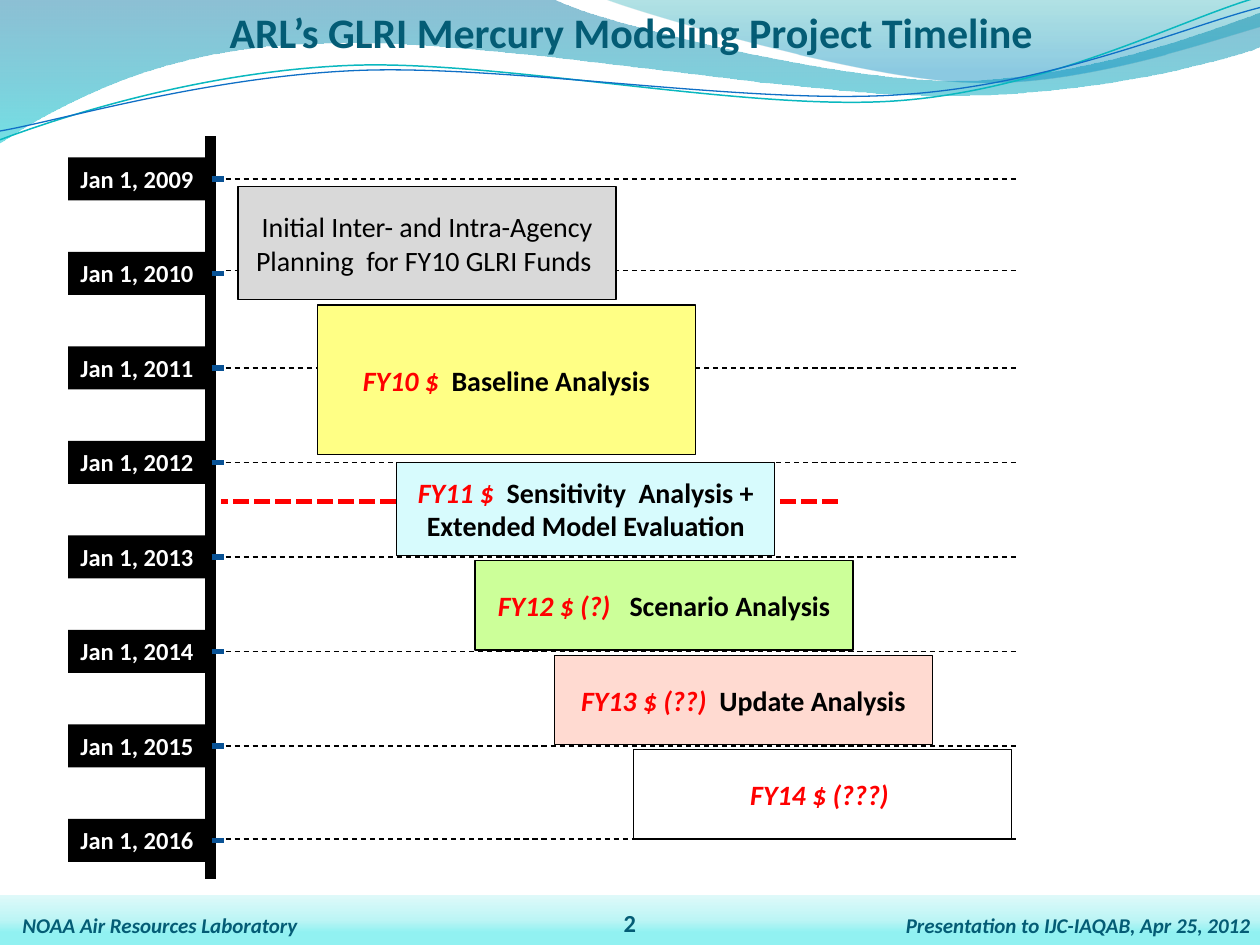
from lxml.etree import SubElement
from pptx import Presentation
from pptx.dml.color import RGBColor as RGB
from pptx.enum.dml import MSO_LINE as Dash
from pptx.enum.shapes import MSO_CONNECTOR as Link, MSO_SHAPE as Form
from pptx.enum.text import MSO_ANCHOR as Anchor, MSO_AUTO_SIZE as Fit, PP_ALIGN as Align
from pptx.oxml import parse_xml
from pptx.oxml.ns import nsdecls, qn
from pptx.util import Cm, Pt

BLACK, WHITE, RED = RGB(0, 0, 0), RGB(255, 255, 255), RGB(255, 0, 0)
TEAL, BLUE = RGB(0x04, 0x5C, 0x75), RGB(0x09, 0x52, 0x95)
AQUA, NAVY = RGB(0x0A, 0xB8, 0xBF), RGB(0x0F, 0x6F, 0xC6)
GRAY, YELLOW, CYAN = RGB(0xD9, 0xD9, 0xD9), RGB(0xFF, 0xFF, 0x85), RGB(0xD7, 0xFB, 0xFD)
GREEN, PINK = RGB(0xCC, 0xFF, 0x99), RGB(0xFF, 0xDA, 0xD1)

# Content; all places are in inches
TITLE = "ARL’s GLRI Mercury Modeling Project Timeline"
YEARS = range(2009, 2017)
# Guides that sit slightly above their tick
RAISED = {2010: 2.15, 2016: 6.66}
# Phases: funding, task, fill, left, top, height
PHASES = [
    ("", "Initial Inter- and Intra-Agency Planning  for FY10 GLRI Funds ", GRAY, 1.89, 1.48, 0.9),
    ("FY10 $  ", "Baseline Analysis", YELLOW, 2.52, 2.42, 1.19),
    ("FY11 $  ", "Sensitivity  Analysis + Extended Model Evaluation", CYAN, 3.15, 3.67, 0.74),
    ("FY12 $ (?)   ", "Scenario Analysis", GREEN, 3.77, 4.45, 0.71),
    ("FY13 $ (??)  ", "Update Analysis", PINK, 4.4, 5.2, 0.71),
    ("FY14 $ (???) ", "", WHITE, 5.03, 5.95, 0.71),
]
# Footer: text, box, size, italic, alignment, anchor
FOOTER = [
    ("NOAA Air Resources Laboratory", (0.08, 7.19, 2.44, 0.3), 12, True, Align.LEFT, Anchor.TOP),
    ("2", (4.85, 7.15, 0.3, 0.34), 14, False, Align.CENTER, Anchor.BOTTOM),
    ("Presentation to IJC-IAQAB, Apr 25, 2012", (7.09, 7.19, 2.98, 0.3), 12, True,
     Align.LEFT, Anchor.TOP),
]
# Wave paths: a pair is a corner, six numbers are a Bezier curve
BANDS = [
    ([(0, 0), (4.4, 0), (4.76, 0.18, 6.64, 0.64, 7.58, 0.64),
      (8.53, 0.64, 9.58, 0.26, 10, 0.1), (10.01, 0.37),
      (9.83, 0.45, 8.7, 0.77, 7.46, 0.76), (6.22, 0.76, 3.82, 0.29, 2.57, 0.35),
      (1.29, 0.36, 0.46, 0.84, -0.01, 1.14), (0, 0)],
     [(0, "0074A1", 45), (100, "00C6CF", 55)]),
    ([(4.79, -0.01), (5.09, 0.11, 6.82, 0.62, 7.69, 0.65),
      (8.56, 0.69, 9.61, 0.32, 10, 0.21), (10, 0), (4.79, -0.01)],
     [(0, "00A1A9", 30), (80, "008BBF", 45)]),
]
CURVES = [
    ([(0, 1.11), (0.48, 0.93, 1.58, 0.57, 2.77, 0.52),
      (3.95, 0.47, 5.93, 0.89, 7.13, 0.8), (8.33, 0.71, 9.38, 0.15, 9.98, -0.02)], AQUA, 0.85),
    ([(0, 1.04), (0.47, 0.96, 1.64, 0.61, 2.83, 0.56),
      (4.03, 0.51, 5.97, 0.84, 7.17, 0.75), (8.36, 0.67, 9.41, 0.21, 10, 0.06)], NAVY, 0.75),
]
FLOOR = [(25, "91F1F1", 100), (50, "BDF5F5", 100), (100, "DFF9F9", 100)]

deck = Presentation()
deck.slide_width, deck.slide_height = Cm(25.4), Cm(19.05)
slide = deck.slides.add_slide(deck.slide_layouts[6])
shapes = slide.shapes


def size(inch):
    return Cm(inch * 2.54)


def blend(shape, stops, angle):
    """Fill a shape with a linear gradient of (place, colour, opacity) stops."""
    marks = "".join(
        f'<a:gs pos="{place * 1000}"><a:srgbClr val="{tint}">'
        f'<a:alpha val="{solid * 1000}"/></a:srgbClr></a:gs>' for place, tint, solid in stops)
    shape.fill.solid()
    props = shape._element.spPr
    props.replace(props.find(qn("a:solidFill")), parse_xml(
        f'<a:gradFill {nsdecls("a")} rotWithShape="1"><a:gsLst>{marks}</a:gsLst>'
        f'<a:lin ang="{angle * 60000}" scaled="0"/></a:gradFill>'))


def wave(path, close):
    """Draw a path of corners and Bezier curves."""
    dots = [(size(part[i]), size(part[i + 1])) for part in path for i in range(0, len(part), 2)]
    pen = shapes.build_freeform(*dots[0], scale=1.0)
    pen.add_line_segments(dots[1:], close=close)
    shape = pen.convert_to_shape()
    shape.shadow.inherit = False
    # Join the three points of each curve into one Bezier segment
    legs = iter(list(shape._element.spPr.iter(qn("a:lnTo"))))
    for part in path[1:]:
        leg = next(legs)
        if len(part) == 6:
            bend = leg.makeelement(qn("a:cubicBezTo"))
            leg.addprevious(bend)
            for piece in (leg, next(legs), next(legs)):
                bend.append(piece[0])
                piece.getparent().remove(piece)
    return shape


def rule(x1, y1, x2, y2, color, width, dash=None):
    line = shapes.add_connector(Link.STRAIGHT, *map(size, (x1, y1, x2, y2)))
    line.line.color.rgb, line.line.width = color, Pt(width)
    if dash:
        line.line.dash_style = dash
    SubElement(line._element.spPr, qn("a:effectLst"))


def block(box, fill=None):
    shape = shapes.add_shape(Form.RECTANGLE, *map(size, box))
    shape.shadow.inherit = False
    shape.line.fill.background()
    if fill is not None:
        shape.fill.solid()
        shape.fill.fore_color.rgb = fill
    return shape


def write(shape, runs, points, align=Align.LEFT, anchor=Anchor.TOP, wrap=True, fit=Fit.NONE):
    """Fill a shape with (text, colour, bold, italic) runs."""
    frame = shape.text_frame
    frame.word_wrap, frame.auto_size, frame.vertical_anchor = wrap, fit, anchor
    para = frame.paragraphs[0]
    para.alignment = align
    for text, color, bold, slant in runs:
        if text:
            run = para.add_run()
            run.text, font = text, run.font
            font.name, font.size, font.color.rgb = "Calibri", Pt(points), color
            font.bold, font.italic = bold, slant


# Backdrop
blend(block((0, 7.1, 10, 0.4)), FLOOR, 270)
for path, stops in BANDS:
    band = wave(path, True)
    band.line.fill.background()
    blend(band, stops, 90)
for path, color, width in CURVES:
    curve = wave(path, False)
    curve.fill.background()
    curve.line.color.rgb, curve.line.width = color, Pt(width)

# Time axis with a label, tick and guide for each year
rule(1.67, 1.08, 1.67, 6.98, BLACK, 6)
for place, year in enumerate(YEARS):
    y = 1.42 + 0.75 * place
    label = block((0.54, y - 0.17, 1.11, 0.34), BLACK)
    write(label, [(f"Jan 1, {year}", WHITE, True, False)], 14,
          wrap=False, fit=Fit.SHAPE_TO_FIT_TEXT)
    level = RAISED.get(year, y)
    rule(1.79, level, 8.09, level, BLACK, 0.75, Dash.DASH)
    rule(1.68, y, 1.78, y, BLUE, 3)

# Present day
rule(6.65, 3.98, 1.75, 3.98, RED, 3, Dash.SQUARE_DOT)

# Title
head = shapes.add_textbox(*map(size, (1.55, 0, 6.92, 0.5)))
write(head, [(TITLE, TEAL, True, False)], 24, Align.CENTER, fit=Fit.SHAPE_TO_FIT_TEXT)

# Phases
for fund, task, fill, left, top, height in PHASES:
    phase = block((left, top, 3, height), fill)
    phase.line.color.rgb, phase.line.width = BLACK, Pt(0.75)
    write(phase, [(fund, RED, True, True), (task, BLACK, bool(fund), False)], 16,
          Align.CENTER, Anchor.MIDDLE)

# Footer
for text, box, points, slant, align, anchor in FOOTER:
    note = shapes.add_textbox(*map(size, box))
    write(note, [(text, TEAL, True, slant)], points, align, anchor,
          wrap=False, fit=Fit.SHAPE_TO_FIT_TEXT)

deck.save("out.pptx")
